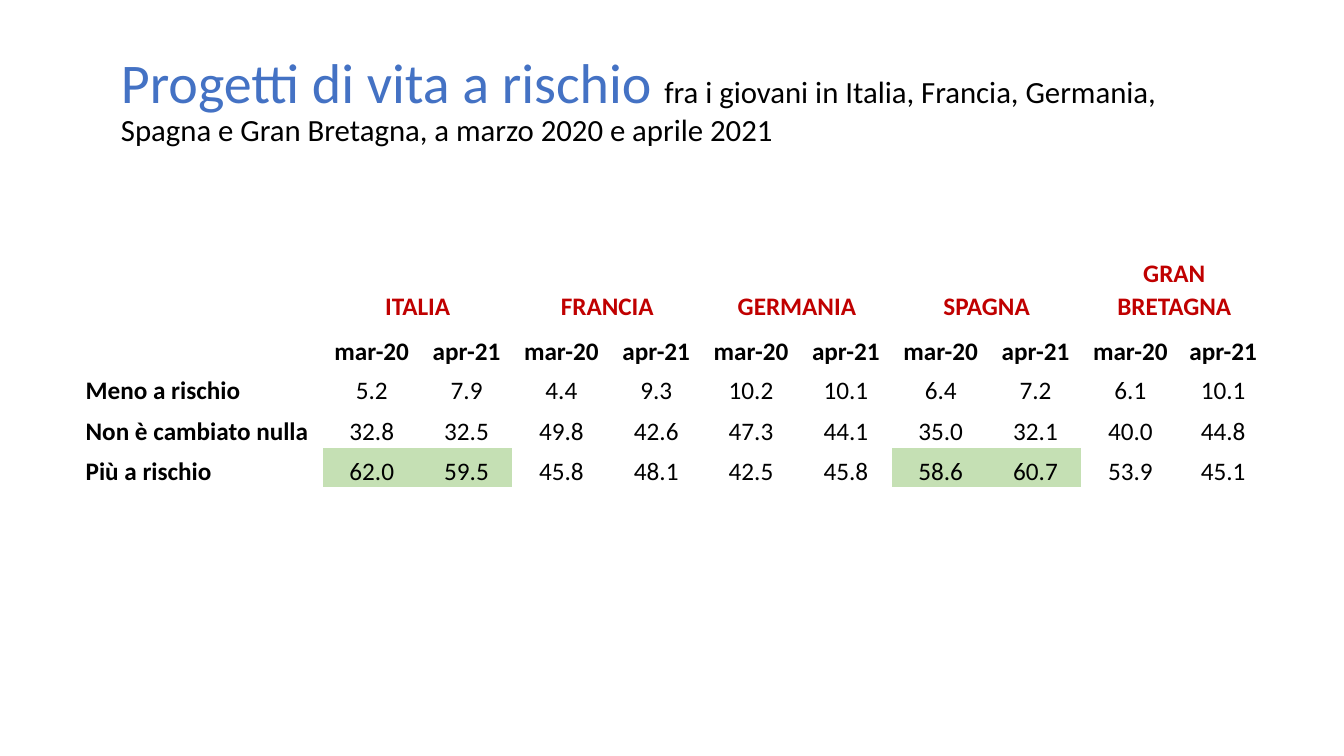
from pptx import Presentation
from pptx.dml.color import RGBColor
from pptx.enum.text import MSO_ANCHOR as Anchor, MSO_AUTO_SIZE as Fit, PP_ALIGN as Align
from pptx.util import Inches, Pt

BLUE, RED, BLACK, WHITE, GREEN = "4472C4", "C00000", "000000", "FFFFFF", "C5E0B4"
PLAIN = "{2D5ABB26-0587-4C30-8999-92F81FD0307C}"  # table style without grid

LANDS = ["ITALIA", "FRANCIA", "GERMANIA", "SPAGNA", "GRAN BRETAGNA"]
DATES = ["mar-20", "apr-21"]
RISKS = {
    "Meno a rischio": [5.2, 7.9, 4.4, 9.3, 10.2, 10.1, 6.4, 7.2, 6.1, 10.1],
    "Non è cambiato nulla": [32.8, 32.5, 49.8, 42.6, 47.3, 44.1, 35.0, 32.1, 40.0, 44.8],
    "Più a rischio": [62.0, 59.5, 45.8, 48.1, 42.5, 45.8, 58.6, 60.7, 53.9, 45.1],
}
MARKED = ["ITALIA", "SPAGNA"]
WIDTHS = [2.44] + [0.97, 0.91] * 4 + [0.97, 0.87]
HEIGHTS = [0.72, 0.45, 0.39, 0.41, 0.39]


def color(code):
    return RGBColor.from_string(code)


def write(para, text, size=18, ink=BLACK, bold=False, align=Align.CENTER, line=1.07, after=8):
    para.alignment = align
    para.line_spacing = line
    para.space_after = Pt(after)
    run = para.add_run()
    run.text = text
    font = run.font
    font.name, font.size, font.bold = "Calibri", Pt(size), bold
    font.color.rgb = color(ink)


def add_title(slide, left, top, width, height):
    title = slide.shapes.title
    title.left, title.top = Inches(left), Inches(top)
    title.width, title.height = Inches(width), Inches(height)
    frame = title.text_frame
    frame.word_wrap = True
    frame.auto_size = Fit.NONE
    frame.vertical_anchor = Anchor.MIDDLE
    para = frame.paragraphs[0]
    look = dict(align=Align.LEFT, line=0.9, after=0)
    write(para, "Progetti di vita a rischio ", size=40, ink=BLUE, **look)
    write(para, "fra i giovani in Italia, Francia, Germania, Spagna e Gran Bretagna, "
          "a marzo 2020 e aprile 2021", size=22, **look)


def fill_cell(cell, text, **look):
    cell.vertical_anchor = Anchor.BOTTOM
    cell.margin_left = cell.margin_right = Inches(0.09)
    cell.margin_top = cell.margin_bottom = 0
    write(cell.text_frame.paragraphs[0], text, **look)


def paint(cell, code):
    cell.fill.solid()
    cell.fill.fore_color.rgb = color(code)


def add_grid(slide, left, top, width, height):
    """Add the table, its columns and rows scaled to the given box."""
    table = slide.shapes.add_table(len(HEIGHTS), len(WIDTHS), Inches(left), Inches(top),
                                   Inches(width), Inches(height)).table
    table.first_row = table.horz_banding = False
    table._tbl.tblPr.find("{*}tableStyleId").text = PLAIN
    for col, size in zip(table.columns, WIDTHS):
        col.width = Inches(size * width / sum(WIDTHS))
    for row, size in zip(table.rows, HEIGHTS):
        row.height = Inches(size * height / sum(HEIGHTS))
    for cell in table.iter_cells():
        paint(cell, WHITE)

    for i, land in enumerate(LANDS):
        first = 1 + i * len(DATES)
        head = table.cell(0, first)
        head.merge(table.cell(0, first + len(DATES) - 1))
        fill_cell(head, land, ink=RED, bold=True)
        for c, date in enumerate(DATES, first):
            fill_cell(table.cell(1, c), date, bold=True)
            if land in MARKED:
                paint(table.cell(len(HEIGHTS) - 1, c), GREEN)

    for r, (risk, shares) in enumerate(RISKS.items(), 2):
        fill_cell(table.cell(r, 0), risk, bold=True, align=Align.LEFT)
        for c, share in enumerate(shares, 1):
            fill_cell(table.cell(r, c), f"{share:.1f}")


def main():
    deck = Presentation()
    deck.slide_width, deck.slide_height = Inches(13.33), Inches(7.5)
    slide = deck.slides.add_slide(deck.slide_layouts[5])
    add_title(slide, 1.1, 0.4, 11.13, 1.22)
    add_grid(slide, 0.76, 2.48, 11.81, 2.35)
    deck.save("out.pptx")


if __name__ == "__main__":
    main()
